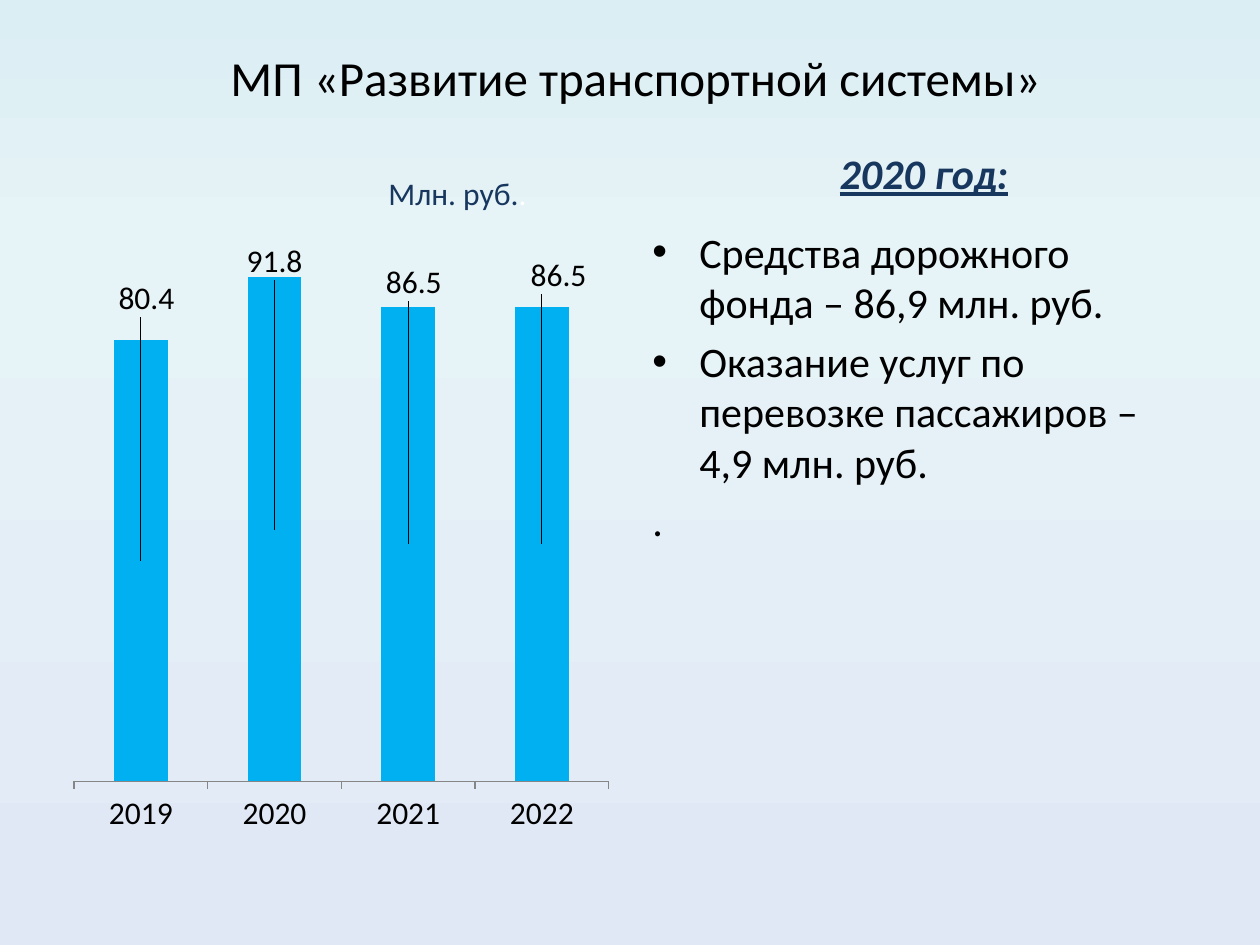
from lxml import etree
from pptx import Presentation
from pptx.chart.data import CategoryChartData
from pptx.dml.color import RGBColor
from pptx.enum.chart import XL_CHART_TYPE, XL_LABEL_POSITION, XL_TICK_MARK
from pptx.enum.text import MSO_ANCHOR, PP_ALIGN
from pptx.oxml import parse_xml
from pptx.oxml.ns import nsdecls, qn
from pptx.util import Pt

STACKED = XL_CHART_TYPE.COLUMN_STACKED
LABEL_CENTER = XL_LABEL_POSITION.CENTER
TICK_OUT = XL_TICK_MARK.OUTSIDE
TOP, MIDDLE = MSO_ANCHOR.TOP, MSO_ANCHOR.MIDDLE
LEFT, CENTER = PP_ALIGN.LEFT, PP_ALIGN.CENTER

EMU_PER_PX = 914400 / 126
BLACK, NAVY, WHITE = "000000", "17375E", "FFFFFF"
BAR_BLUE, AXIS_GRAY = "00B0F0", "868686"


def px(length):
    return round(length * EMU_PER_PX)


def rgb(value):
    return RGBColor.from_string(value)


def manual_layout(target="", **fractions):
    """Chart layout from fractions of the chart area (x, y, w, h)."""
    parts = "".join(f'<c:{key} val="{value:.2f}"/>' for key, value in fractions.items())
    return parse_xml(f'<c:layout {nsdecls("c")}><c:manualLayout>{target}{parts}'
                     "</c:manualLayout></c:layout>")


class SlideBuilder:
    font = "Calibri"

    def __init__(self, deck):
        self.slide = deck.slides.add_slide(deck.slide_layouts[6])

    def background(self, stops):
        """Vertical gradient from (percent, colour) stops."""
        self.slide.background.fill.solid()
        properties = self.slide.element.find(".//" + qn("p:bgPr"))
        marks = "".join(f'<a:gs pos="{percent * 1000}"><a:srgbClr val="{color}"/></a:gs>'
                        for percent, color in stops)
        gradient = parse_xml(f'<a:gradFill {nsdecls("a")} rotWithShape="1"><a:gsLst>{marks}'
                             '</a:gsLst><a:lin ang="5400000" scaled="0"/></a:gradFill>')
        properties.replace(properties[0], gradient)

    def style(self, font, size, color, bold=False, italic=False, underline=False):
        font.name, font.size = self.font, Pt(size)
        font.color.rgb = rgb(color)
        font.bold, font.italic, font.underline = bold, italic, underline

    def box(self, left, top, width, height, anchor=MIDDLE):
        frame = self.slide.shapes.add_textbox(px(left), px(top), px(width), px(height)).text_frame
        frame.word_wrap = True
        frame.vertical_anchor = anchor
        return frame

    def add_text(self, para, text, align=CENTER, **font_format):
        para.alignment = align
        span = para.add_run()
        span.text = text
        self.style(span.font, **font_format)

    def bullet(self, para, indent):
        properties = para._p.get_or_add_pPr()
        properties.set("marL", str(px(indent)))
        properties.set("indent", str(-px(indent)))
        etree.SubElement(properties, qn("a:buFont")).set("typeface", "Arial")
        etree.SubElement(properties, qn("a:buChar")).set("char", "•")

    def column_chart(self, left, top, width, height, values, label_shifts):
        """Stacked columns; each label is moved by (x, y) px from its bar's centre."""
        data = CategoryChartData(number_format="0.0")
        data.categories = list(values)
        data.add_series("Series 1", list(values.values()))
        chart = self.slide.shapes.add_chart(
            STACKED, px(left), px(top), px(width), px(height), data).chart
        chart.has_legend = chart.has_title = False
        self.style(chart.font, 18, BLACK)

        value_axis = chart.value_axis
        value_axis.visible = value_axis.has_major_gridlines = False
        value_axis.minimum_scale, value_axis.maximum_scale = 0, 100
        category_axis = chart.category_axis
        category_axis.major_tick_mark = TICK_OUT
        category_axis.format.line.color.rgb = rgb(AXIS_GRAY)

        plot = chart.plots[0]
        plot.gap_width, plot.overlap, plot.vary_by_categories = 150, 100, False
        series = plot.series[0]
        series.format.fill.solid()
        series.format.fill.fore_color.rgb = rgb(BAR_BLUE)
        series.data_labels.show_value = True
        for index in range(len(label_shifts)):
            label = series.points[index].data_label
            self.style(label.font, 18, BLACK)
            label.position = LABEL_CENTER
        chart_space = plot_area = chart.element if hasattr(chart, "element") else chart._chartSpace
        for label, (x, y) in zip(chart_space.iter(qn("c:dLbl")), label_shifts):
            label.insert(1, manual_layout(x=x / width, y=y / height))

        plot_area = chart_space.find(".//" + qn("c:plotArea"))
        for layout in plot_area.findall(qn("c:layout")):
            plot_area.remove(layout)
        target = '<c:layoutTarget val="inner"/><c:xMode val="edge"/><c:yMode val="edge"/>'
        plot_area.insert(0, manual_layout(target, x=0.02, y=0.02, w=0.96, h=0.88))


def main():
    deck = Presentation()
    deck.slide_width, deck.slide_height = px(1260), px(945)
    page = SlideBuilder(deck)
    page.background([(0, "DBEEF4"), (25, "E6F3F7"), (100, "E1E8F5")])

    title = page.box(32, 38, 1207, 78)
    page.add_text(title.paragraphs[0], "МП «Развитие транспортной системы»", size=28, color=BLACK)

    page.column_chart(63, 220, 557, 624,
                      {"2019": 80.4, "2020": 91.8, "2021": 86.5, "2022": 86.5},
                      [(8, -264), (0, -268), (6, -265), (16, -267)])

    body = page.box(640, 220, 557, 624, anchor=TOP)
    items = ["Средства дорожного фонда – 86,9 млн. руб.",
             "Оказание услуг по перевозке пассажиров – 4,9 млн. руб.", "."]
    for index, text in enumerate(items):
        para = body.paragraphs[0] if index == 0 else body.add_paragraph()
        para.space_before = Pt(4.8)
        if text != ".":
            page.bullet(para, 47)
        page.add_text(para, text, align=LEFT, size=24, color=BLACK)

    year = page.box(819, 136, 210, 73)
    page.add_text(year.paragraphs[0], "2020 год:", size=24, color=NAVY,
                  bold=True, italic=True, underline=True)

    unit = page.box(368, 174, 179, 37).paragraphs[0]
    for text, color in [("Млн. руб.", NAVY), (".", WHITE)]:
        page.add_text(unit, text, size=18, color=color)

    deck.save("out.pptx")


if __name__ == "__main__":
    main()
